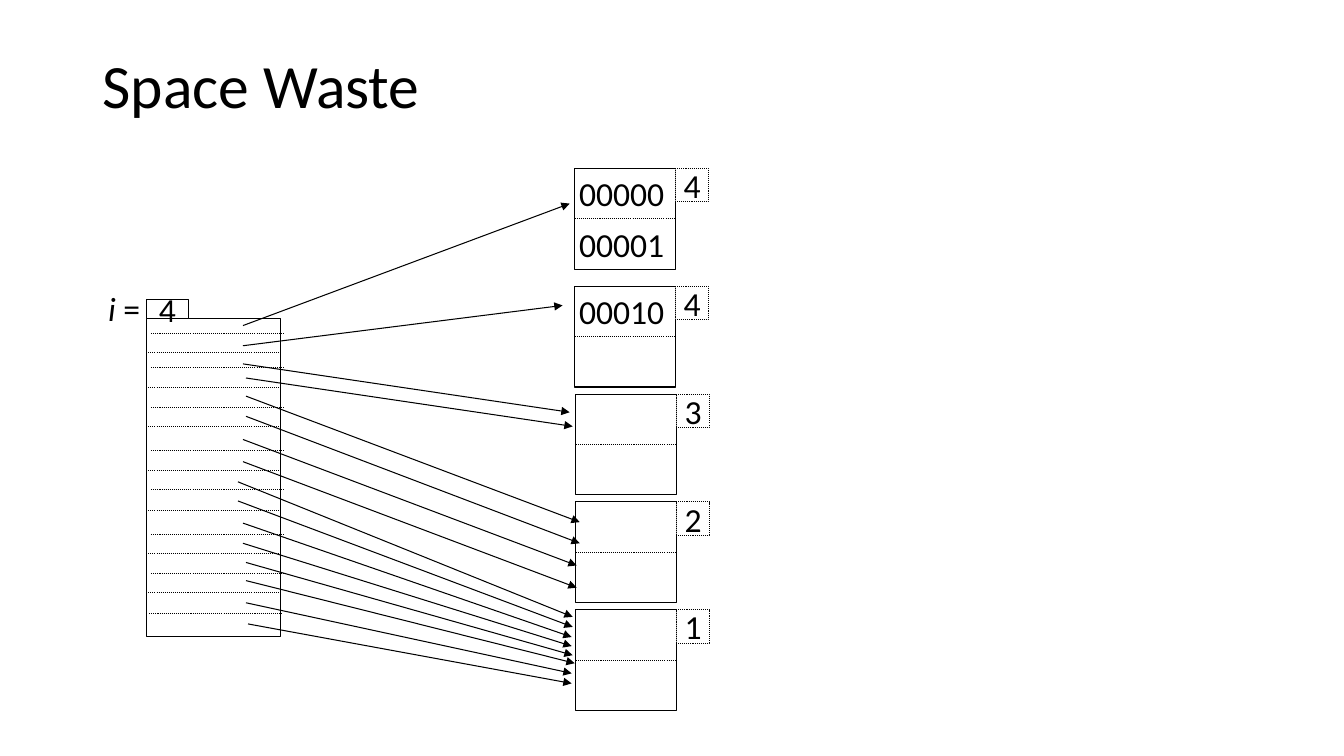
from lxml import etree
from pptx import Presentation
from pptx.dml.color import RGBColor
from pptx.enum.dml import MSO_LINE
from pptx.enum.shapes import MSO_CONNECTOR, MSO_SHAPE
from pptx.enum.text import MSO_ANCHOR, PP_ALIGN
from pptx.oxml.ns import qn
from pptx.util import Inches, Pt

BLACK = RGBColor(0, 0, 0)
WHITE = RGBColor(255, 255, 255)
DOTTED = MSO_LINE.ROUND_DOT
STRAIGHT = MSO_CONNECTOR.STRAIGHT
RECTANGLE = MSO_SHAPE.RECTANGLE
MIDDLE = MSO_ANCHOR.MIDDLE
LEFT, CENTER = PP_ALIGN.LEFT, PP_ALIGN.CENTER

BUCKET_SIDE = 1
DEPTH_SIDE = 0.33
BUCKETS = [
    (5.7, 1.67, "4", ["00000", "00001"]),
    (5.7, 2.84, "4", ["00010"]),
    (5.71, 3.91, "3", []),
    (5.71, 4.98, "2", []),
    (5.71, 6.05, "1", []),
]
DIRECTORY = (1.45, 3.16, 1.33, 3.16)
ROW_DIVIDERS = [
    (0, [3.5, 3.84, 4.23, 4.67, 5.06, 5.49, 5.88]),
    (0.05, [3.31, 3.65, 4.04, 4.47, 4.86, 5.3, 5.69]),
    (0.03, [6.09]),
]
POINTERS = [
    (2.41, 3.23, 5.65, 2.02), (2.41, 3.43, 5.58, 3.03),
    (2.41, 3.61, 5.65, 4.09), (2.44, 3.75, 5.68, 4.23),
    (2.44, 3.93, 5.75, 5.18), (2.44, 4.13, 5.75, 5.39),
    (2.41, 4.36, 5.72, 5.61), (2.41, 4.58, 5.72, 5.83),
    (2.36, 4.78, 5.68, 6.12), (2.36, 4.97, 5.68, 6.22),
    (2.41, 5.19, 5.67, 6.32), (2.41, 5.39, 5.67, 6.41),
    (2.44, 5.58, 5.68, 6.5), (2.44, 5.76, 5.7, 6.58),
    (2.44, 5.98, 5.67, 6.68), (2.46, 6.19, 5.67, 6.78),
]


def write(shape, text, size=24, align=CENTER, margin=0, spacing=1, wrap=False, italic_start=0):
    frame = shape.text_frame
    frame.word_wrap = wrap
    frame.vertical_anchor = MIDDLE
    frame.margin_left = frame.margin_right = Inches(margin)
    frame.margin_top = frame.margin_bottom = Inches(margin / 2)
    paragraph = frame.paragraphs[0]
    paragraph.alignment = align
    paragraph.line_spacing = spacing
    for part, italic in ((text[:italic_start], True), (text[italic_start:], False)):
        if part:
            run = paragraph.add_run()
            run.text = part
            run.font.name = "Calibri"
            run.font.size = Pt(size)
            run.font.italic = italic
            run.font.color.rgb = BLACK


def add_label(slide, box, text, **style):
    write(slide.shapes.add_textbox(*map(Inches, box)), text, **style)


def style_line(line, dash=None):
    line.color.rgb = BLACK
    line.width = Pt(0.75)
    if dash is not None:
        line.dash_style = dash


def add_box(slide, box, dash=None):
    rect = slide.shapes.add_shape(RECTANGLE, *map(Inches, box))
    rect.shadow.inherit = False
    rect.fill.solid()
    rect.fill.fore_color.rgb = WHITE
    style_line(rect.line, dash)
    return rect


def add_line(slide, ends, dash=None, arrow=False):
    connector = slide.shapes.add_connector(STRAIGHT, *map(Inches, ends))
    style_line(connector.line, dash)
    properties = connector.line._get_or_add_ln()
    if arrow:
        etree.SubElement(properties, qn("a:tailEnd"), type="triangle")
    etree.SubElement(properties.getparent(), qn("a:effectLst"))
    return connector


def add_bucket(slide, left, top, depth, keys):
    right, middle = left + BUCKET_SIDE, top + BUCKET_SIDE / 2
    bucket = add_box(slide, (left, top, BUCKET_SIDE, BUCKET_SIDE))
    write(add_box(slide, (right, top, DEPTH_SIDE, DEPTH_SIDE), DOTTED), depth)
    divider = add_line(slide, (left, middle, right, middle), DOTTED)
    divider.begin_connect(bucket, 1)
    divider.end_connect(bucket, 3)
    slot = BUCKET_SIDE / 2
    for row, key in enumerate(keys):
        add_label(slide, (left - 0.06, top + row * slot, 1.05, slot), key)


def add_directory(slide, left, top, width, height):
    add_box(slide, (left, top, width, height))
    write(add_box(slide, (left, top - 0.19, 0.42, 0.19)), "4")
    add_label(slide, (left - 0.48, top - 0.35, 0.52, 0.5), "i =", italic_start=1)
    for shift, rows in ROW_DIVIDERS:
        for y in rows:
            add_line(slide, (left + shift, y, left + shift + width, y), DOTTED)


def main():
    deck = Presentation()
    deck.slide_width, deck.slide_height = Inches(13.33), Inches(7.5)
    slide = deck.slides.add_slide(deck.slide_layouts[6])
    add_label(slide, (0.92, 0.33, 11.5, 1.09), "Space Waste", size=44,
              align=LEFT, margin=0.1, spacing=0.9, wrap=True)
    for bucket in BUCKETS:
        add_bucket(slide, *bucket)
    add_directory(slide, *DIRECTORY)
    for pointer in POINTERS:
        add_line(slide, pointer, arrow=True)
    deck.save("out.pptx")


if __name__ == "__main__":
    main()
